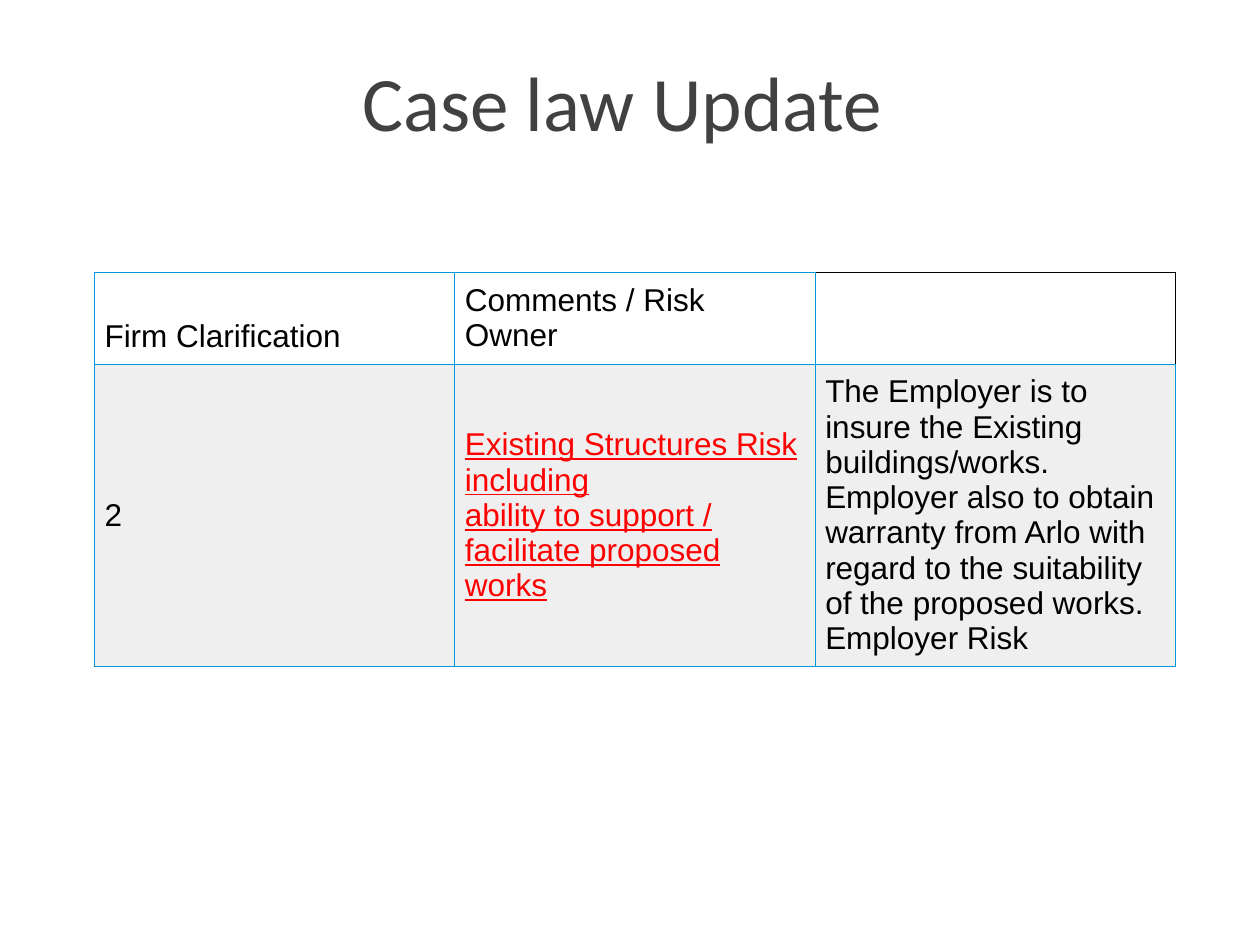
from pptx import Presentation
from pptx.dml.color import RGBColor
from pptx.enum.text import MSO_ANCHOR, PP_ALIGN
from pptx.oxml import parse_xml
from pptx.oxml.ns import nsdecls
from pptx.util import Inches, Pt

MIDDLE, BOTTOM = MSO_ANCHOR.MIDDLE, MSO_ANCHOR.BOTTOM
CENTER = PP_ALIGN.CENTER

BLACK = RGBColor(0x00, 0x00, 0x00)
WHITE = RGBColor(0xFF, 0xFF, 0xFF)
GREY = RGBColor(0xEF, 0xEF, 0xEF)
RED = RGBColor(0xFF, 0x00, 0x00)
BLUE = RGBColor(0x00, 0x98, 0xD8)
DARK = RGBColor(0x41, 0x40, 0x42)

TITLE = "Case law Update "
# Each cell is a list of paragraphs.
ROWS = [
    [["Firm Clarification"], ["Comments / Risk Owner"], []],
    [
        ["2"],
        [
            "Existing Structures Risk including",
            "ability to support / facilitate proposed",
            "works",
        ],
        [
            "The Employer is to insure the Existing buildings/works. "
            "Employer also to obtain warranty from Arlo with regard to the "
            "suitability of the proposed works. Employer Risk"
        ],
    ],
]
ROW_HEIGHTS = [0.73, 2.4]
ROW_FILLS = [WHITE, GREY]
COLUMN_WIDTH = 2.86
INSET = Inches(0.08)
LINE_WIDTH = Pt(0.6)
RISK_CELL = (1, 1)
LOWERED_CELL = (0, 0)
EMPTY_CELL = (0, 2)


def set_borders(cell, colors):
    """Draw the left, right, top and bottom borders in the given colours."""
    properties = cell._tc.get_or_add_tcPr()
    for index, (side, color) in enumerate(zip("LRTB", colors)):
        line = parse_xml(
            f'<a:ln{side} {nsdecls("a")} w="{LINE_WIDTH}"><a:solidFill>'
            f'<a:srgbClr val="{color}"/></a:solidFill></a:ln{side}>'
        )
        properties.insert(index, line)


def fill_cell(cell, lines, position):
    cell.fill.solid()
    cell.fill.fore_color.rgb = ROW_FILLS[position[0]]
    cell.margin_left = cell.margin_right = INSET
    cell.margin_top = cell.margin_bottom = INSET
    cell.vertical_anchor = BOTTOM if position == LOWERED_CELL else MIDDLE
    cell.text = "\n".join(lines)
    for paragraph in cell.text_frame.paragraphs:
        font = paragraph.font
        font.name, font.size, font.bold = "Arial", Pt(18), False
        font.underline = position == RISK_CELL
        font.color.rgb = RED if position == RISK_CELL else BLACK
    edge = BLACK if position == EMPTY_CELL else BLUE
    set_borders(cell, [BLUE, edge, edge, BLUE])


def main():
    deck = Presentation()
    deck.slide_width, deck.slide_height = Inches(10), Inches(7.5)
    page = deck.slides.add_slide(deck.slide_layouts[5])

    title = page.shapes.title
    title.left, title.top = Inches(0.51), Inches(0.13)
    title.width, title.height = Inches(9), Inches(1.34)
    title.text_frame.text = TITLE
    title.text_frame.vertical_anchor = MIDDLE
    heading = title.text_frame.paragraphs[0]
    heading.alignment = CENTER
    heading.font.name, heading.font.size = "Calibri", Pt(44)
    heading.font.color.rgb = DARK

    columns = len(ROWS[0])
    table = page.shapes.add_table(
        len(ROWS), columns, Inches(0.75), Inches(2.16),
        Inches(COLUMN_WIDTH * columns), Inches(sum(ROW_HEIGHTS)),
    ).table
    table.first_row = table.horz_banding = False
    for column in table.columns:
        column.width = Inches(COLUMN_WIDTH)
    for row, cells in enumerate(ROWS):
        table.rows[row].height = Inches(ROW_HEIGHTS[row])
        for column, lines in enumerate(cells):
            fill_cell(table.cell(row, column), lines, (row, column))

    deck.save("out.pptx")


if __name__ == "__main__":
    main()
